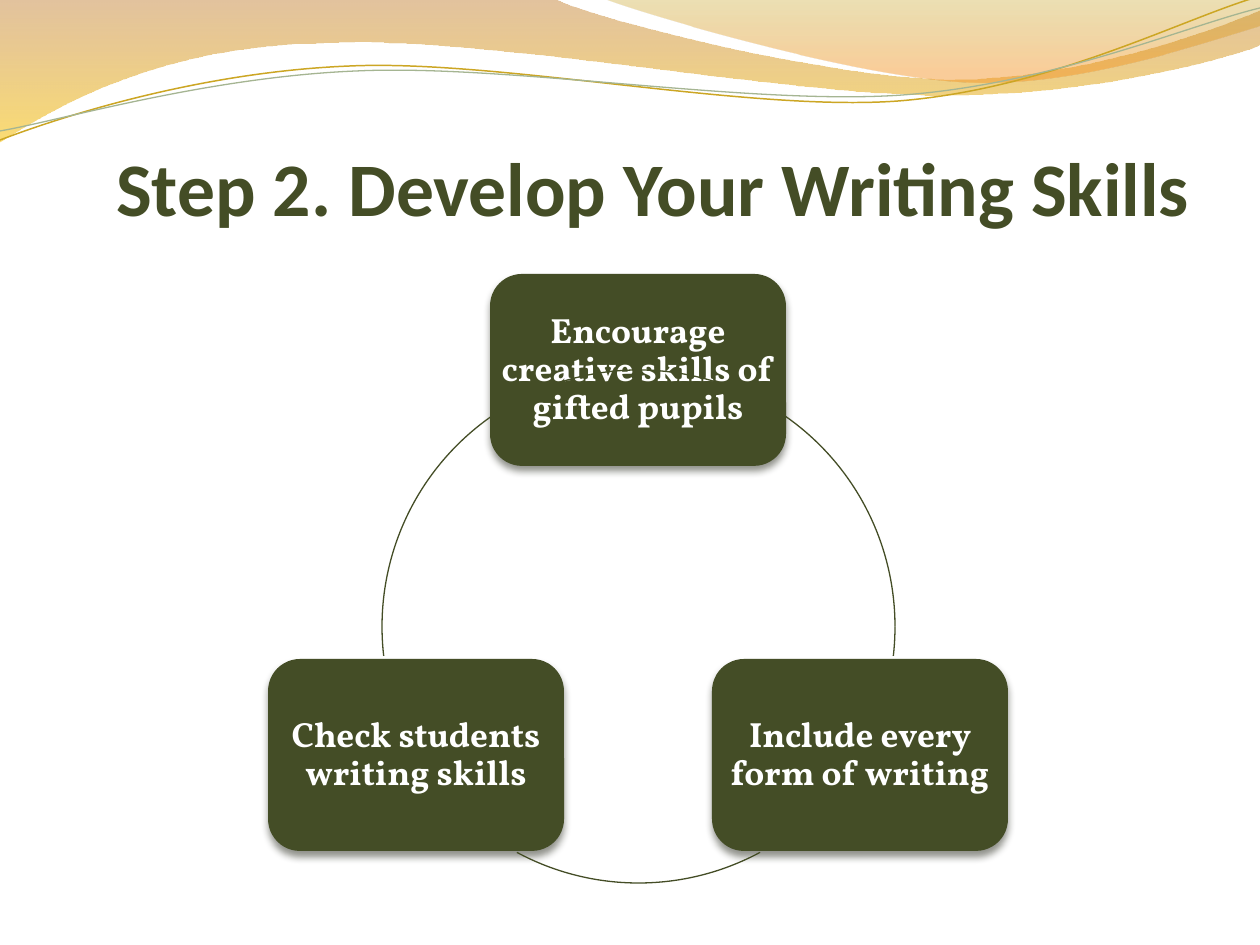
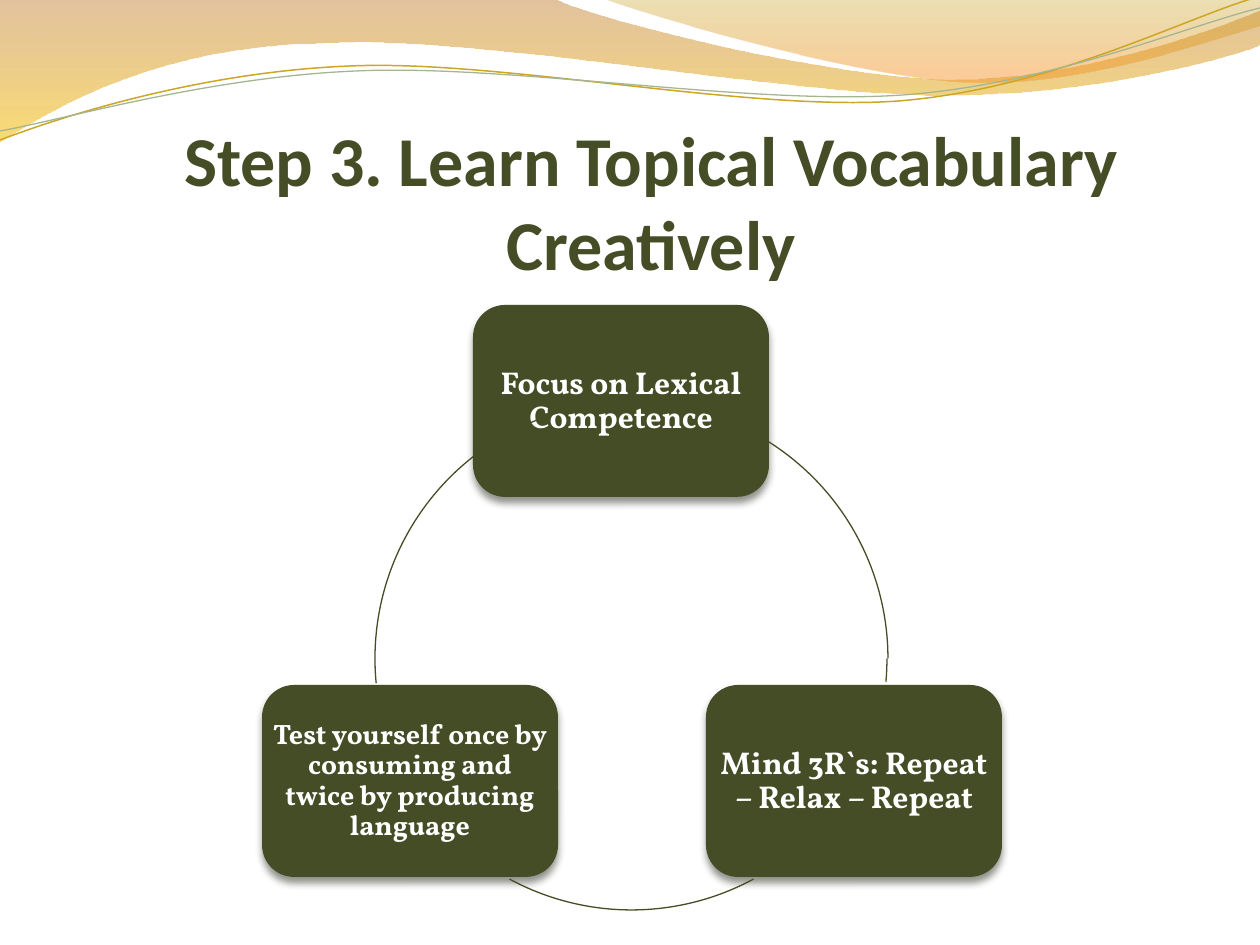
from lxml.etree import SubElement as Sub
from pptx import Presentation
from pptx.dml.color import RGBColor as Rgb
from pptx.enum.shapes import MSO_SHAPE as Kind
from pptx.enum.text import MSO_ANCHOR as Anchor, MSO_AUTO_SIZE as Fit, PP_ALIGN as Align
from pptx.oxml.ns import qn
from pptx.util import Emu, Pt

HUES = {"olive": "444D26", "white": "FFFFFF", "shade": "181B0D", "brown": "C07A28",
        "gold": "F7BF00", "khaki": "C09709", "amber": "F59320",
        "ochre": "CCA624", "sage": "A5B592"}

WAVES = [
    {"path": [[(0, 0)], [(554, -1)],
              [(600, 21), (837, 79), (955, 79)], [(1075, 79), (1207, 33), (1260, 11)],
              [(1261, 45)],
              [(1239, 55), (1096, 96), (940, 95)], [(781, 95), (481, 35), (324, 43)],
              [(163, 45), (58, 105), (-1, 142)]],
     "fade": [(0, "brown", 45), (100, "gold", 55)]},
    {"path": [[(604, -1)],
              [(641, 14), (859, 78), (969, 82)], [(1079, 87), (1211, 40), (1260, 26)],
              [(1260, 0)]],
     "fade": [(0, "khaki", 30), (80, "amber", 45)]},
    {"path": [[(0, 140)],
              [(60, 117), (199, 72), (349, 66)], [(498, 59), (747, 112), (898, 101)],
              [(1050, 89), (1182, 19), (1257, -3)]],
     "line": ("ochre", 0.85)},
    {"path": [[(0, 131)],
              [(59, 121), (207, 77), (357, 71)], [(508, 64), (752, 106), (903, 95)],
              [(1053, 84), (1186, 26), (1260, 8)]],
     "line": ("sage", 0.75)},
]

SLIDES = [
    {"title": "Step 2. Develop Your Writing Skills", "size": 43.2,
     "place": (86, 122, 1134, 110),
     "cards": [("Encourage creative skills of gifted pupils", 20, 490, 274),
               ("Include every form of writing", 20, 712, 659),
               ("Check students writing skills", 20, 268, 659)],
     "arcs": [(382, 370, 305.8, 6.6), (382, 370, 61.7, 118.3), (382, 370, 173.4, 234.2)]},
    {"title": "Step 3. Learn Topical Vocabulary Creatively", "size": 40,
     "place": (84, 116, 1134, 169),
     "cards": [("Focus on Lexical Competence", 18, 473, 305),
               ("Mind 3R`s: Repeat – Relax – Repeat", 18, 706, 685),
               ("Test yourself once by consuming and twice by producing language",
                16, 262, 685)],
     "arcs": [(374, 402, 303, 5.2), (375, 397, 61.6, 118.4), (375, 402, 174.5, 230.8)]},
]
CARD = (296, 192)
RING = 513
SCALE = 914400 / 126


def px(n):
    return Emu(round(n * SCALE))


def rgb(name):
    return Rgb.from_string(HUES[name])


def put(item, **vals):
    for key, val in vals.items():
        setattr(item, key, val)


def tint(node, name, alpha):
    hue = Sub(node, qn("a:srgbClr"), val=HUES[name])
    Sub(hue, qn("a:alpha"), val=str(alpha * 1000))


def stroke(shape, name, width):
    shape.fill.background()
    shape.line.color.rgb = rgb(name)
    shape.line.width = Pt(width)


def write(shape, text, size, font, color, anchor, pads, space):
    frame = shape.text_frame
    frame.text = text
    left, top, right, low = map(px, pads)
    put(frame, word_wrap=True, auto_size=Fit.NONE, vertical_anchor=anchor,
        margin_left=left, margin_top=top, margin_right=right, margin_bottom=low)
    para = frame.paragraphs[0]
    put(para, alignment=Align.CENTER, line_spacing=space)
    put(para.runs[0].font, name=font, size=Pt(size), bold=True)
    para.runs[0].font.color.rgb = rgb(color)


def bend(shape, path):
    nodes = iter(shape._element.findall(".//" + qn("a:lnTo")))
    for step in path[1:]:
        group = [next(nodes) for _ in step]
        if len(group) == 3:
            first, *rest = group
            curve = first.makeelement(qn("a:cubicBezTo"))
            first.addprevious(curve)
            for node in group:
                curve.append(node[0])
                node.getparent().remove(node)


def fade(shape, stops):
    grad = shape._element.spPr.makeelement(qn("a:gradFill"), rotWithShape="1")
    list_ = Sub(grad, qn("a:gsLst"))
    for pos, name, alpha in stops:
        tint(Sub(list_, qn("a:gs"), pos=str(pos * 1000)), name, alpha)
    Sub(grad, qn("a:lin"), ang="5400000", scaled="0")
    shape._element.spPr.insert(2, grad)
    shape.line.fill.background()


def wave(slide, layout, spot, data):
    path = data["path"]
    pen = slide.shapes.build_freeform(*path[0][0], scale=SCALE)
    pen.add_line_segments([pt for step in path[1:] for pt in step], close="fade" in data)
    shape = pen.convert_to_shape()
    bend(shape, path)
    if "fade" in data:
        fade(shape, data["fade"])
    else:
        stroke(shape, *data["line"])
    shape.shadow.inherit = False
    layout.shapes._spTree.insert(spot, shape._element)


def card(slide, text, size, left, top):
    shape = slide.shapes.add_shape(Kind.ROUNDED_RECTANGLE, *map(px, (left, top, *CARD)))
    shape.fill.solid()
    shape.fill.fore_color.rgb = rgb("olive")
    shape.line.fill.background()
    shape.shadow.inherit = False
    glow = Sub(shape._element.spPr.find(qn("a:effectLst")), qn("a:outerShdw"),
               blurRad=str(Pt(4.5)), dist=str(Pt(3)), dir="5400000", rotWithShape="0")
    tint(glow, "shade", 48)
    write(shape, text, size, "Vollkorn", "white", Anchor.MIDDLE, (0, 0, 0, 0), 0.9)


def arc(slide, left, top, start, end):
    shape = slide.shapes.add_shape(Kind.ARC, *map(px, (left, top, RING, RING)))
    for i, deg in enumerate((start, end)):
        shape.adjustments[i] = (deg if deg <= 180 else deg - 360) * 0.6
    stroke(shape, "olive", 0.75)
    shape.shadow.inherit = False


def build(deck, layout, data):
    slide = deck.slides.add_slide(layout)
    title = slide.shapes.title
    left, top, width, height = map(px, data["place"])
    put(title, left=left, top=top, width=width, height=height)
    write(title, data["title"], data["size"], "Calibri", "olive", Anchor.BOTTOM,
          (0, 6, 0, 0), 1.0)
    for item in data["cards"]:
        card(slide, *item)
    for item in data["arcs"]:
        arc(slide, *item)
    return slide


def main():
    deck = Presentation()
    put(deck, slide_width=px(1260), slide_height=px(945))
    layout = deck.slide_layouts[5]
    slides = [build(deck, layout, data) for data in SLIDES]
    for spot, data in enumerate(WAVES, 2):
        wave(slides[0], layout, spot, data)
    deck.save("out.pptx")


if __name__ == "__main__":
    main()
